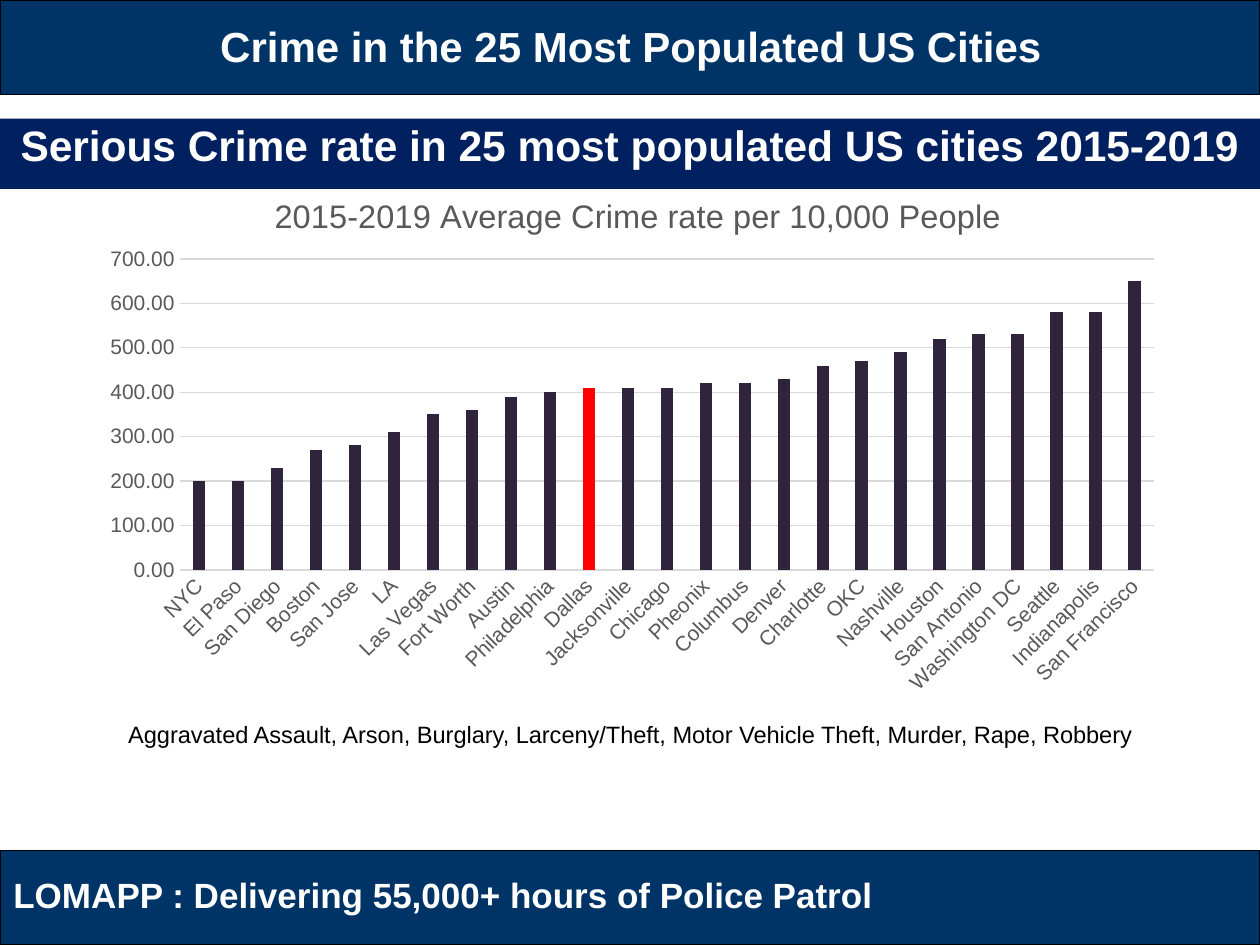
from lxml.etree import SubElement
from pptx import Presentation
from pptx.chart.data import CategoryChartData
from pptx.dml.color import RGBColor
from pptx.enum.chart import XL_CHART_TYPE as ChartType, XL_TICK_MARK as Tick
from pptx.enum.shapes import MSO_SHAPE as Shape
from pptx.enum.text import MSO_ANCHOR as Anchor, PP_ALIGN as Align
from pptx.oxml import parse_xml
from pptx.oxml.ns import nsdecls, qn
from pptx.util import Cm, Pt

COLORS = {
    "banner": "003366", "title": "002060", "white": "FFFFFF", "black": "000000",
    "bar": "30243C", "highlight": "FF0000", "grid": "D9D9D9", "label": "595959",
}
FONT = "Arial"
WIDTH, HEIGHT, BANNER = 25.4, 19.05, 1.9
HIGHLIGHT_CITY = "Dallas"
CRIME_RATES = {
    "NYC": 200, "El Paso": 200, "San Diego": 230, "Boston": 270, "San Jose": 280,
    "LA": 310, "Las Vegas": 350, "Fort Worth": 360, "Austin": 390,
    "Philadelphia": 400, "Dallas": 410, "Jacksonville": 410, "Chicago": 410,
    "Pheonix": 420, "Columbus": 420, "Denver": 430, "Charlotte": 460, "OKC": 470,
    "Nashville": 490, "Houston": 520, "San Antonio": 530, "Washington DC": 530,
    "Seattle": 580, "Indianapolis": 580, "San Francisco": 650,
}


def rgb(name):
    return RGBColor.from_string(COLORS[name])


def set_font(font, size, color, bold=False):
    font.name, font.size, font.bold = FONT, Pt(size), bold
    font.color.rgb = rgb(color)


def set_line(line, color):
    line.color.rgb = rgb(color)
    line.width = Pt(0.75)


def manual_layout(x, y, w=None, h=None):
    """Chart layout in fractions of the chart; the size sets the inner plot."""
    target = '<c:layoutTarget val="inner"/>' if w else ""
    values = {"x": x, "y": y, "w": w, "h": h}
    modes = "".join(f'<c:{k}Mode val="edge"/>' for k in "xy")
    sizes = "".join(f'<c:{k} val="{v}"/>' for k, v in values.items() if v)
    return parse_xml(f'<c:layout {nsdecls("c")}><c:manualLayout>{target}{modes}{sizes}'
                     '</c:manualLayout></c:layout>')


def place_layout(parent, layout, before):
    for old in parent.findall(qn("c:layout")):
        parent.remove(old)
    parent.find(qn(before)).addprevious(layout)


class SlideBuilder:
    def __init__(self, slide):
        self.slide = slide

    def fill_text(self, sp, text, size, color, align=Align.CENTER, bold=True,
                  anchor=Anchor.TOP, spacing=None, wrap=True):
        tf = sp.text_frame
        tf.word_wrap, tf.vertical_anchor = wrap, anchor
        p = tf.paragraphs[0]
        p.text, p.alignment, p.line_spacing = text, align, spacing
        set_font(p.font, size, color, bold)

    def title(self, text, x, y, w, h):
        sp = self.slide.shapes.title
        sp.left, sp.top, sp.width, sp.height = Cm(x), Cm(y), Cm(w), Cm(h)
        sp.fill.solid()
        sp.fill.fore_color.rgb = rgb("title")
        self.fill_text(sp, text, 24.3, "white", spacing=0.9)

    def banner(self, y):
        sp = self.slide.shapes.add_shape(Shape.RECTANGLE, 0, Cm(y), Cm(WIDTH), Cm(BANNER))
        sp.shadow.inherit = False
        sp.fill.solid()
        sp.fill.fore_color.rgb = rgb("banner")
        set_line(sp.line, "black")

    def text(self, text, x, y, w, h, size, color, fill=None, **style):
        sp = self.slide.shapes.add_textbox(Cm(x), Cm(y), Cm(w), Cm(h))
        if fill:
            sp.fill.solid()
            sp.fill.fore_color.rgb = rgb(fill)
        self.fill_text(sp, text, size, color, **style)

    def column_chart(self, title, rates, highlight, x, y, w, h):
        data = CategoryChartData(number_format="0.00")
        data.categories = list(rates)
        data.add_series("Series 1", list(rates.values()))
        chart = self.slide.shapes.add_chart(
            ChartType.COLUMN_CLUSTERED, Cm(x), Cm(y), Cm(w), Cm(h), data).chart
        set_font(chart.font, 10, "black")
        chart.has_legend = False

        p = chart.chart_title.text_frame.paragraphs[0]
        p.text = title
        set_font(p.font, 18.6, "label")
        plot_area = chart.element.find(".//" + qn("c:plotArea"))
        title_xml = chart.element.find(".//" + qn("c:title"))
        for old in title_xml.findall(qn("c:overlay")):
            title_xml.remove(old)
        SubElement(title_xml, qn("c:overlay")).set("val", "0")
        place_layout(title_xml, manual_layout(0.166, 0.045), "c:overlay")
        place_layout(plot_area, manual_layout(0.084, 0.176, 0.897, 0.574), "c:barChart")

        plot = chart.plots[0]
        plot.gap_width, plot.overlap, plot.vary_by_categories = 219, -27, False
        series = plot.series[0]
        point = series.points[list(rates).index(highlight)]
        for item, color in ((series, "bar"), (point, "highlight")):
            item.format.fill.solid()
            item.format.fill.fore_color.rgb = rgb(color)

        cat, val = chart.category_axis, chart.value_axis
        for axis in (cat, val):
            axis.major_tick_mark = axis.minor_tick_mark = Tick.NONE
            set_font(axis.tick_labels.font, 12, "label")
        set_line(cat.format.line, "grid")
        cat_body = plot_area.find(f"{qn('c:catAx')}/{qn('c:txPr')}/{qn('a:bodyPr')}")
        cat_body.set("rot", "-2700000")
        val.minimum_scale, val.maximum_scale, val.major_unit = 0, 700, 100
        val.format.line.fill.background()
        set_line(val.major_gridlines.format.line, "grid")
        val.tick_labels.number_format = "0.00"
        val.tick_labels.number_format_is_linked = False


def main():
    prs = Presentation()
    prs.slide_width, prs.slide_height = Cm(WIDTH), Cm(HEIGHT)
    s = SlideBuilder(prs.slides.add_slide(prs.slide_layouts[5]))
    s.title("Serious Crime rate in 25 most populated US cities 2015-2019",
            0, 2.39, WIDTH, 1.42)
    s.column_chart("2015-2019 Average Crime rate per 10,000 People",
                   CRIME_RATES, HIGHLIGHT_CITY, 1.78, 3.3, 21.9, 10.92)
    s.text("Aggravated Assault, Arson, Burglary, Larceny/Theft, Motor Vehicle Theft, "
           "Murder, Rape, Robbery", 0.02, 14.38, WIDTH - 0.02, 1.42, 13.5, "black",
           fill="white", bold=False)
    s.banner(HEIGHT - BANNER)
    s.text("LOMAPP : Delivering 55,000+ hours of Police Patrol",
           0.02, 17.48, 17.96, 1.11, 20, "white", align=Align.LEFT, wrap=False)
    s.banner(0)
    s.text("Crime in the 25 Most Populated US Cities", 0.02, 0, WIDTH, 1.98, 24, "white",
           anchor=Anchor.MIDDLE, spacing=0.9)
    prs.save("out.pptx")


if __name__ == "__main__":
    main()
